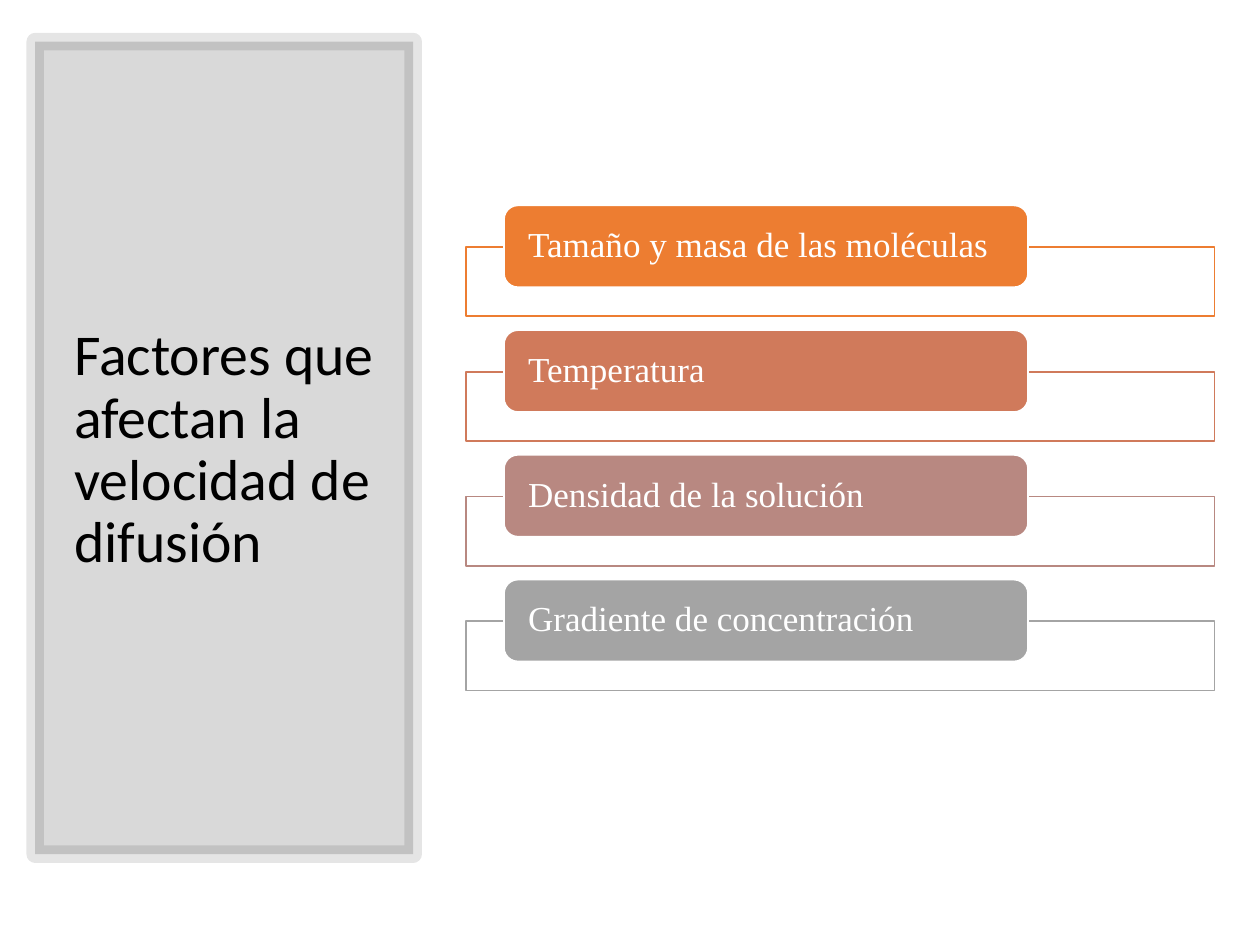
from lxml.etree import SubElement
from pptx import Presentation
from pptx.dml.color import RGBColor
from pptx.enum.shapes import MSO_SHAPE as Shape
from pptx.enum.text import MSO_ANCHOR as Anchor, PP_ALIGN as Align
from pptx.oxml.ns import qn
from pptx.util import Inches, Pt

BLACK = RGBColor(0x00, 0x00, 0x00)
WHITE = RGBColor(0xFF, 0xFF, 0xFF)
ORANGE = RGBColor(0xED, 0x7D, 0x31)
TERRACOTTA = RGBColor(0xD0, 0x7A, 0x5B)
ROSE = RGBColor(0xB8, 0x88, 0x81)
GRAY = RGBColor(0xA4, 0xA4, 0xA4)

TITLE = "Factores que afectan la velocidad de difusión"
FACTORS = [
    ("Tamaño y masa de las moléculas", ORANGE),
    ("Temperatura", TERRACOTTA),
    ("Densidad de la solución", ROSE),
    ("Gradiente de concentración", GRAY),
]
FIRST_TOP = 1.63
ROW_PITCH = 0.99
FRAME_DROP = 0.33


def add_box(page, kind, place, fill, line, width):
    box = page.shapes.add_shape(kind, *map(Inches, place))
    box.shadow.inherit = False
    box.fill.solid()
    box.fill.fore_color.rgb = fill
    box.line.color.rgb = line
    box.line.width = Pt(width)
    return box


def set_alpha(properties, percent):
    color = properties.find(qn("a:solidFill"))[0]
    SubElement(color, qn("a:alpha"), val=str(percent * 1000))


def write(box, text, font, size, color, side, edge):
    frame = box.text_frame
    frame.word_wrap = True
    frame.vertical_anchor = Anchor.MIDDLE
    frame.margin_left = frame.margin_right = Inches(side)
    frame.margin_top = frame.margin_bottom = Inches(edge)
    para = frame.paragraphs[0]
    para.alignment = Align.LEFT
    para.line_spacing = 0.9
    span = para.add_run()
    span.text = text
    span.font.name = font
    span.font.size = Pt(size)
    span.font.color.rgb = color


def main():
    deck = Presentation()
    deck.slide_width, deck.slide_height = Inches(10), Inches(7.5)
    page = deck.slides.add_slide(deck.slide_layouts[6])

    panel = add_box(page, Shape.RECTANGLE, (0.28, 0.33, 3, 6.45), BLACK, BLACK, 10)
    properties = panel.fill._xPr
    set_alpha(properties, 15)
    set_alpha(properties.find(qn("a:ln")), 10)

    title = page.shapes.add_textbox(*map(Inches, (0.49, 0.7, 2.59, 5.75)))
    write(title, TITLE, "Calibri", 33, BLACK, 0.1, 0.05)

    for row, (factor, color) in enumerate(FACTORS):
        top = FIRST_TOP + row * ROW_PITCH
        frame = add_box(page, Shape.RECTANGLE,
                        (3.7, top + FRAME_DROP, 5.94, 0.55), WHITE, color, 1)
        set_alpha(frame.fill._xPr, 89)
        label = add_box(page, Shape.ROUNDED_RECTANGLE,
                        (4, top, 4.16, 0.65), color, WHITE, 1)
        label.adjustments[0] = 0.17
        write(label, factor, "Times New Roman", 20, WHITE, 0.16, 0)

    deck.save("out.pptx")


if __name__ == "__main__":
    main()
